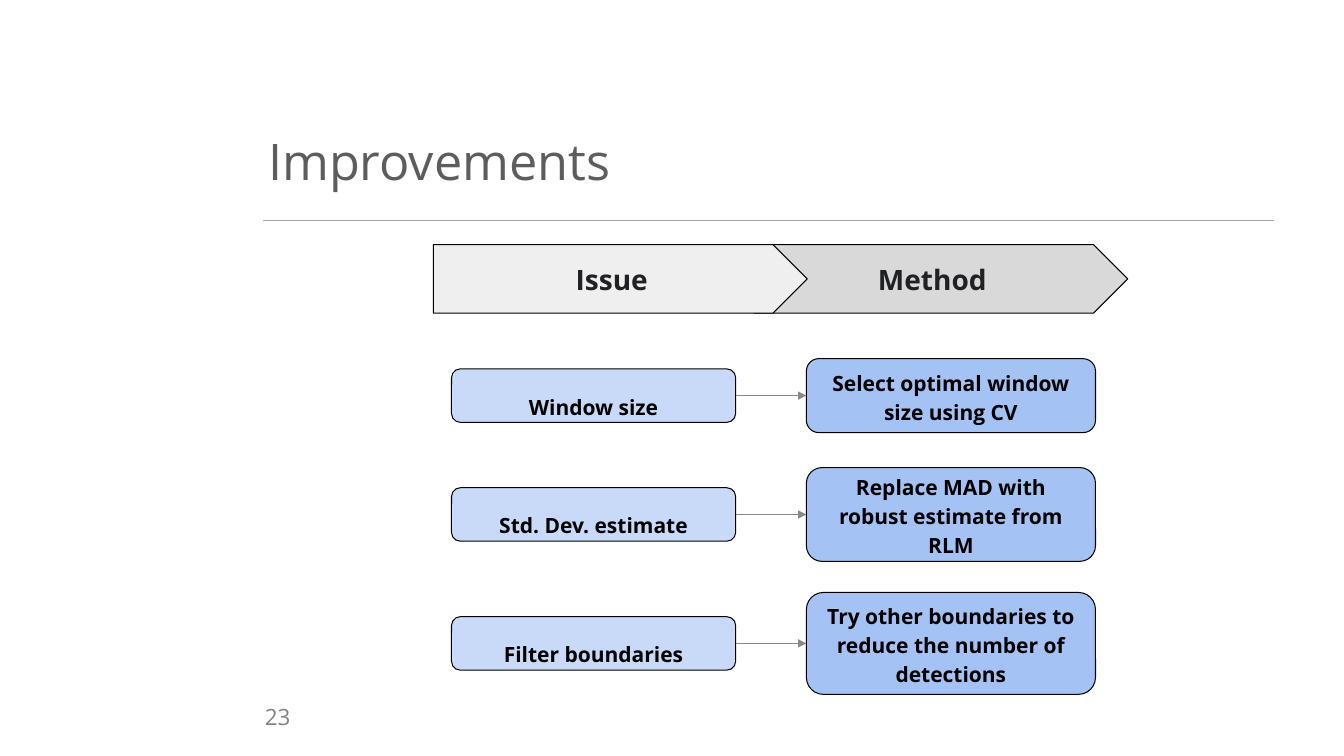
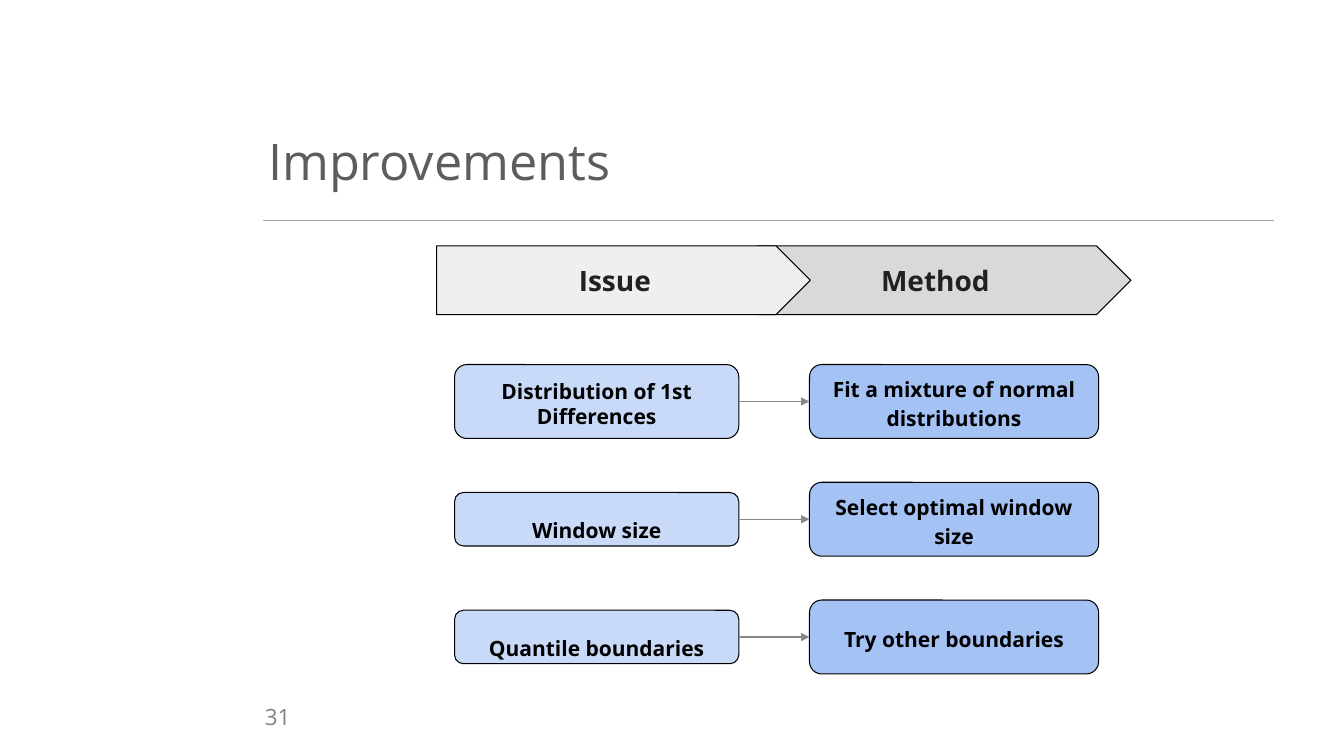
from dataclasses import dataclass

from lxml.etree import SubElement
from pptx import Presentation
from pptx.dml.color import RGBColor as Color
from pptx.enum.shapes import MSO_CONNECTOR as Connector, MSO_SHAPE as Shape
from pptx.enum.text import MSO_ANCHOR as Anchor, PP_ALIGN as Align
from pptx.oxml.ns import qn
from pptx.util import Pt


@dataclass(frozen=True)
class Theme:
    font: str = "Open Sans"
    title: str = "5D5D5D"
    number: str = "828282"
    rule: str = "A5A5A5"
    arrow: str = "898989"
    outline: str = "000000"
    header_text: str = "202124"
    issue_header: str = "EFEFEF"
    method_header: str = "D9D9D9"
    issue: str = "C9DAF8"
    method: str = "A4C2F4"
    title_size: float = 36
    header_size: float = 20
    number_size: float = 16
    box_size: float = 15
    thin: float = 0.75


THEME = Theme()
HEADER_W, HEADER_H, HEADER_STEP = 267, 49, 229
ISSUE_X, ISSUE_W = 12.9, 203
METHOD_X, METHOD_W = 266.4, 206.5
ISSUE_H, METHOD_H = 38.2, 52.8


def write(shape, text, *, size, color, bold=False, align=Align.CENTER,
          anchor=Anchor.MIDDLE, spacing=1.0, inset=7.2):
    frame = shape.text_frame
    frame.word_wrap = True
    frame.vertical_anchor = anchor
    frame.margin_left = frame.margin_right = Pt(inset)
    frame.margin_top = frame.margin_bottom = Pt(inset)
    paragraph = frame.paragraphs[0]
    paragraph.alignment = align
    paragraph.line_spacing = spacing
    run = paragraph.add_run()
    run.text = text
    run.font.name = THEME.font
    run.font.size = Pt(size)
    run.font.bold = bold
    run.font.color.rgb = Color.from_string(color)


class Deck:
    def __init__(self, theme):
        self.theme = theme
        self.presentation = Presentation()
        self.presentation.slide_width = Pt(960)
        self.presentation.slide_height = Pt(540)
        self.slide = None

    def new_slide(self, title, number):
        layout = self.presentation.slide_layouts[6]
        self.slide = self.presentation.slides.add_slide(layout)
        self.line(188, 157.5, 910, 157.5, self.theme.rule, 1)
        self.label(number, 183.6, 498.2, 27.4, 26.6, size=self.theme.number_size,
                   color=self.theme.number, align=Align.RIGHT)
        self.label(title, 188, 91.4, 463, 51.1, size=self.theme.title_size,
                   color=self.theme.title, align=Align.LEFT, spacing=0.9)

    def label(self, text, left, top, width, height, **style):
        box = self.slide.shapes.add_textbox(Pt(left), Pt(top), Pt(width), Pt(height))
        write(box, text, inset=3.6, **style)

    def line(self, x1, y1, x2, y2, color, width):
        line = self.slide.shapes.add_connector(
            Connector.STRAIGHT, Pt(x1), Pt(y1), Pt(x2), Pt(y2))
        line.line.color.rgb = Color.from_string(color)
        line.line.width = Pt(width)
        SubElement(line._element.spPr, qn("a:effectLst"))
        return line

    def arrow(self, source, target):
        arrow = self.line(0, 0, 0, 0, self.theme.arrow, self.theme.thin)
        arrow.begin_connect(source, 3)
        arrow.end_connect(target, 1)
        SubElement(arrow.line._get_or_add_ln(), qn("a:tailEnd"), type="triangle")

    def panel(self, kind, text, left, top, width, height, fill, **style):
        panel = self.slide.shapes.add_shape(
            kind, Pt(left), Pt(top), Pt(width), Pt(height))
        panel.shadow.inherit = False
        panel.fill.solid()
        panel.fill.fore_color.rgb = Color.from_string(fill)
        panel.line.color.rgb = Color.from_string(self.theme.outline)
        panel.line.width = Pt(self.theme.thin)
        write(panel, text, bold=True, **style)
        return panel

    def headers(self, left, top):
        for text, offset, fill in (("Method", HEADER_STEP, self.theme.method_header),
                                   ("Issue", 0, self.theme.issue_header)):
            self.panel(Shape.PENTAGON, text, left + offset, top, HEADER_W, HEADER_H,
                       fill, size=self.theme.header_size, color=self.theme.header_text)

    def box(self, text, left, middle, width, height, fill, **style):
        return self.panel(Shape.ROUNDED_RECTANGLE, text, left, middle - height / 2,
                          width, height, fill, size=self.theme.box_size,
                          color=self.theme.outline, **style)

    def improvement(self, left, middle, issue, method, issue_height=ISSUE_H,
                    method_height=METHOD_H, issue_spacing=1.5):
        issue_box = self.box(issue, left + ISSUE_X, middle, ISSUE_W, issue_height,
                             self.theme.issue, anchor=Anchor.TOP, spacing=issue_spacing)
        method_box = self.box(method, left + METHOD_X, middle, METHOD_W, method_height,
                              self.theme.method, spacing=1.15)
        self.arrow(issue_box, method_box)


IMPROVEMENTS = [
    ("23", 309.6, 174.7, [
        (282.6, "Window size", "Select optimal window size using CV", {}),
        (367.5, "Std. Dev. estimate", "Replace MAD with robust estimate from RLM",
         {"method_height": 67}),
        (459.6, "Filter boundaries",
         "Try other boundaries to reduce the number of detections",
         {"method_height": 72.8}),
    ]),
    ("31", 311.8, 175.7, [
        (286.8, "Distribution of 1st Differences",
         "Fit a mixture of normal distributions",
         {"issue_height": METHOD_H, "issue_spacing": 1.0}),
        (370.9, "Window size", "Select optimal window size", {}),
        (455, "Quantile boundaries", "Try other boundaries", {}),
    ]),
]


def main():
    deck = Deck(THEME)
    for number, left, top, rows in IMPROVEMENTS:
        deck.new_slide("Improvements", number)
        deck.headers(left, top)
        for middle, issue, method, sizes in rows:
            deck.improvement(left, middle, issue, method, **sizes)
    deck.presentation.save("out.pptx")


if __name__ == "__main__":
    main()
